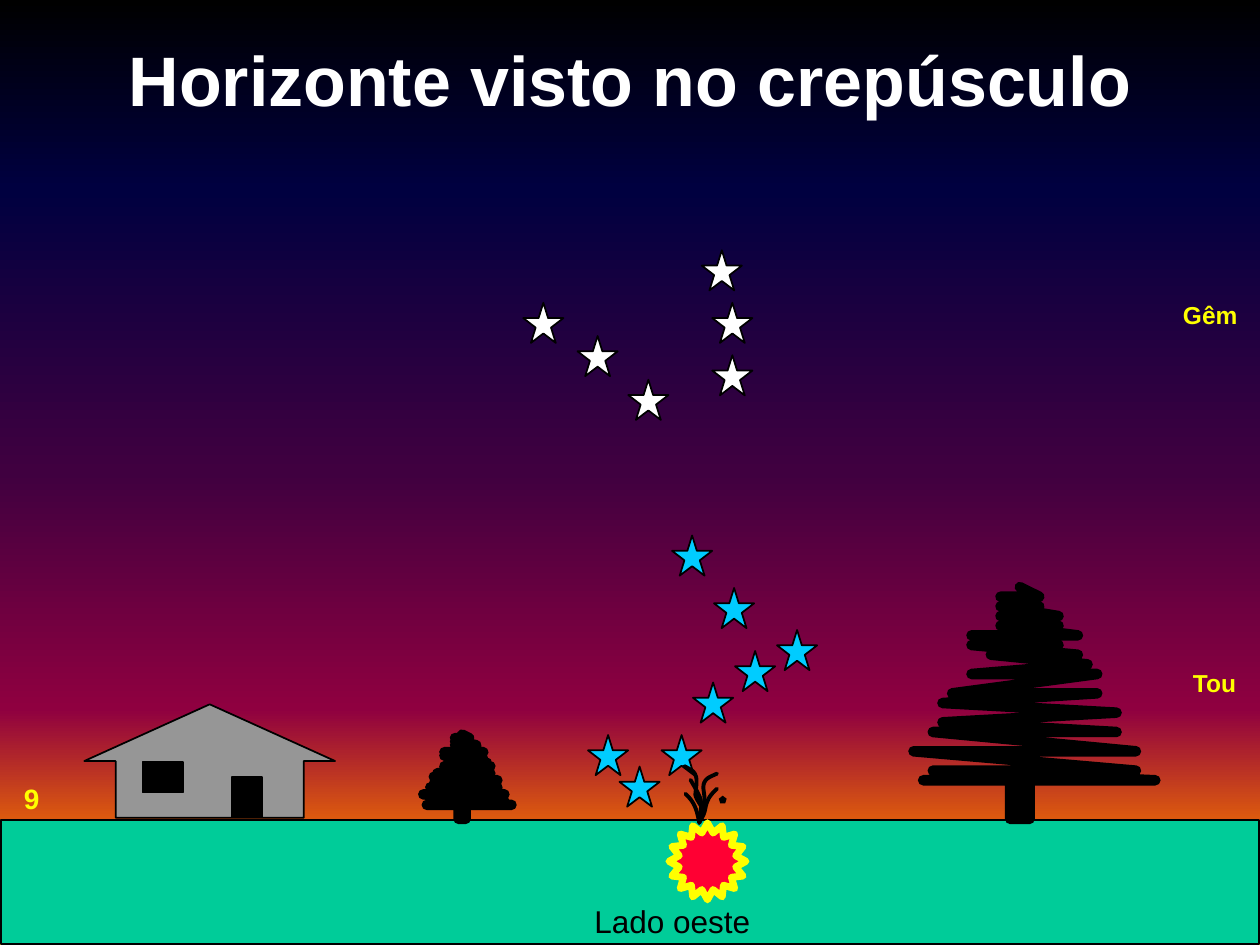
import pptx
import pptx.dml.color
import pptx.enum.shapes
import pptx.enum.text
import pptx.oxml
import pptx.oxml.ns
import pptx.util

Pt = pptx.util.Pt
MSO_SHAPE = pptx.enum.shapes.MSO_SHAPE
PP_ALIGN = pptx.enum.text.PP_ALIGN
MSO_ANCHOR = pptx.enum.text.MSO_ANCHOR
MSO_AUTO_SIZE = pptx.enum.text.MSO_AUTO_SIZE

THEME = {
    "font": "Arial", "title": 40, "number": 16, "label": 14, "caption": 18,
    "white": "FFFFFF", "black": "000000", "yellow": "FFFF00", "red": "FF0033",
    "blue": "00CCFF", "gray": "969696", "ground": "00CC99",
    "sky": [(0, "000000"), (20, "000040"), (50, "400040"),
            (75, "8F0040"), (90, "F27300"), (100, "FFBF00")],
}

TITLE = "Horizonte visto no crepúsculo"
# text, box, size, colour, bold
LABELS = [
    ("9", (6.5, 442.8, 23, 26.6), "number", "yellow", True),
    ("Gêm", (668.9, 167.8, 45.4, 23.8), "label", "yellow", True),
    ("Tou", (673.9, 378, 40.3, 23.8), "label", "yellow", True),
    ("Lado oeste", (331.9, 511.9, 104.4, 28.8), "caption", "black", False),
]

STAR_SIZE = 23
STARS = {
    "white": [(401, 143), (407, 173), (407, 203), (359, 217), (330, 192), (299, 173)],
    "blue": [(384, 306), (408, 336), (444, 360), (420, 372), (396, 390),
             (378, 420), (354, 438), (336, 420)],
}

# Fir outline on a grid of 25 columns and 24 rows
FIR_GRID = (25, 24)
FIR = [(11, 0), (13, 1), (9, 1), (13, 2), (9, 2), (15, 3), (9, 3), (15, 4), (9, 4),
       (17, 5), (6, 5), (15, 6), (6, 6), (17, 7), (8, 7), (18, 8), (6, 9), (19, 9),
       (4, 11), (19, 11), (3, 12), (21, 13), (3, 14), (21, 15), (2, 15), (23, 17),
       (0, 17), (23, 19), (2, 19), (25, 20), (1, 20), (10, 20), (10, 24), (12, 24),
       (12, 20)]
FIR_TRUNK = (10, 20, 2, 4)
LARGE_FIR = (522, 335.5, 138.2, 132.5)
SMALL_FIR = (241.9, 419.8, 50.4, 48.2)

# Each branch: a start, then Bézier points in threes
SHRUB_BRANCHES = [
    [(391.7, 453.6), (393.8, 455.8), (395.3, 457.2), (396.7, 460.1),
     (398.2, 463), (398.9, 466.6), (399.6, 470.2)],
    [(394.6, 445.7), (396.7, 449.3), (398.9, 452.9), (400.3, 456.5),
     (401, 460.8), (400.3, 465.8), (399.6, 470.2)],
    [(409.7, 450.7), (407.5, 452.9), (405.4, 455), (404.6, 457.2),
     (403.2, 460.1), (403.2, 462.2), (402.5, 464.4),
     (401.8, 466.6), (400.3, 468.7), (399.6, 470.2)],
    [(409.7, 442.1), (406.8, 443.5), (403.9, 444.2), (402.5, 447.1),
     (401, 450), (403.2, 455), (402.5, 457.9),
     (401.8, 460.8), (401, 463), (400.3, 464.4)],
    [(391, 437.8), (393.8, 439.2), (396.7, 440.6), (397.4, 442.8),
     (398.9, 445.7), (397.4, 451.4), (397.4, 454.3),
     (398.2, 457.2), (399.6, 458.6), (400.3, 460.1)],
]
SHRUB_BUD = (411.8, 455.8, 2.4, 2.4)
CURVE_STEPS = 8


def color(name):
    return pptx.dml.color.RGBColor.from_string(THEME[name])


def paint_sky(slide):
    fill = slide.background.fill
    fill.gradient()
    fill.gradient_angle = 270
    stops = slide.element.find(".//" + pptx.oxml.ns.qn("a:gsLst"))
    for stop in list(stops):
        stops.remove(stop)
    for percent, value in THEME["sky"]:
        stops.append(pptx.oxml.parse_xml(
            f'<a:gs {pptx.oxml.ns.nsdecls("a")} pos="{percent * 1000}">'
            f'<a:srgbClr val="{value}"/></a:gs>'))


def style_text(text_frame, size, fill, bold, align=PP_ALIGN.CENTER):
    paragraph = text_frame.paragraphs[0]
    paragraph.alignment = align
    font = paragraph.runs[0].font
    font.name, font.size, font.bold = THEME["font"], Pt(THEME[size]), bold
    font.color.rgb = color(fill)


def add_figure(slide, kind, box, fill, line="black", width=1, adjustments=()):
    shape = slide.shapes.add_shape(kind, *map(Pt, box))
    shape.shadow.inherit = False
    shape.fill.solid()
    shape.fill.fore_color.rgb = color(fill)
    shape.line.color.rgb = color(line)
    shape.line.width = Pt(width)
    for index, value in enumerate(adjustments):
        shape.adjustments[index] = value
    return shape


def add_stroke(slide, points, width):
    """Draw an open, unfilled black line with round ends and joins."""
    start, *others = [(Pt(x), Pt(y)) for x, y in points]
    builder = slide.shapes.build_freeform(*start)
    builder.add_line_segments(others, close=False)
    shape = builder.convert_to_shape()
    shape.shadow.inherit = False
    shape.fill.background()
    shape.line.color.rgb = color("black")
    shape.line.width = Pt(width)
    outline = shape.line._get_or_add_ln()
    outline.set("cap", "rnd")
    outline.append(pptx.oxml.parse_xml(f'<a:round {pptx.oxml.ns.nsdecls("a")}/>'))


def add_fir(slide, box):
    left, top, width, height = box
    column, row = width / FIR_GRID[0], height / FIR_GRID[1]
    add_stroke(slide, [(left + x * column, top + y * row) for x, y in FIR], 6)
    x, y, columns, rows = FIR_TRUNK
    trunk = (left + x * column, top + y * row, columns * column, rows * row)
    add_figure(slide, MSO_SHAPE.RECTANGLE, trunk, "black")


def curve_points(controls):
    """Sample a chain of cubic Bézier curves."""
    points = [controls[0]]
    for first in range(0, len(controls) - 1, 3):
        a, b, c, d = controls[first:first + 4]
        for step in range(1, CURVE_STEPS + 1):
            t = step / CURVE_STEPS
            s = 1 - t
            points.append(tuple(
                s ** 3 * a[i] + 3 * s * s * t * b[i] + 3 * s * t * t * c[i] + t ** 3 * d[i]
                for i in (0, 1)))
    return points


def add_house(slide):
    add_figure(slide, MSO_SHAPE.UP_ARROW, (48.2, 402.5, 143.3, 64.8), "gray",
               adjustments=(0.75, 0.5))
    for opening in [(132.5, 444.2, 17.3, 23), (81.4, 435.6, 23, 17.3)]:
        add_figure(slide, MSO_SHAPE.RECTANGLE, opening, "black")


def add_label(slide, text, box, size, fill, bold):
    text_frame = slide.shapes.add_textbox(*map(Pt, box)).text_frame
    text_frame.word_wrap = False
    text_frame.auto_size = MSO_AUTO_SIZE.SHAPE_TO_FIT_TEXT
    text_frame.text = text
    style_text(text_frame, size, fill, bold)


def main():
    presentation = pptx.Presentation()
    presentation.slide_width, presentation.slide_height = Pt(720), Pt(540)
    slide = presentation.slides.add_slide(presentation.slide_layouts[5])
    paint_sky(slide)

    title = slide.shapes.title
    title.left, title.top, title.width, title.height = map(Pt, (0, 0, 720, 90))
    title.text_frame.text = TITLE
    title.text_frame.vertical_anchor = MSO_ANCHOR.MIDDLE
    style_text(title.text_frame, "title", "white", True)

    add_figure(slide, MSO_SHAPE.RECTANGLE, (0.7, 468.7, 718.6, 70.6), "ground")
    add_figure(slide, MSO_SHAPE.STAR_16_POINT, (382.3, 470.2, 44, 44), "red",
               line="yellow", width=4, adjustments=(0.375,))
    add_fir(slide, LARGE_FIR)
    add_house(slide)
    add_fir(slide, SMALL_FIR)
    for fill, corners in STARS.items():
        for left, top in corners:
            add_figure(slide, MSO_SHAPE.STAR_5_POINT,
                       (left, top, STAR_SIZE, STAR_SIZE), fill)
    add_figure(slide, MSO_SHAPE.STAR_5_POINT, SHRUB_BUD, "yellow", width=2.25)
    for branch in SHRUB_BRANCHES:
        add_stroke(slide, curve_points(branch), 2.25)
    for label in LABELS:
        add_label(slide, *label)

    presentation.save("out.pptx")


if __name__ == "__main__":
    main()
